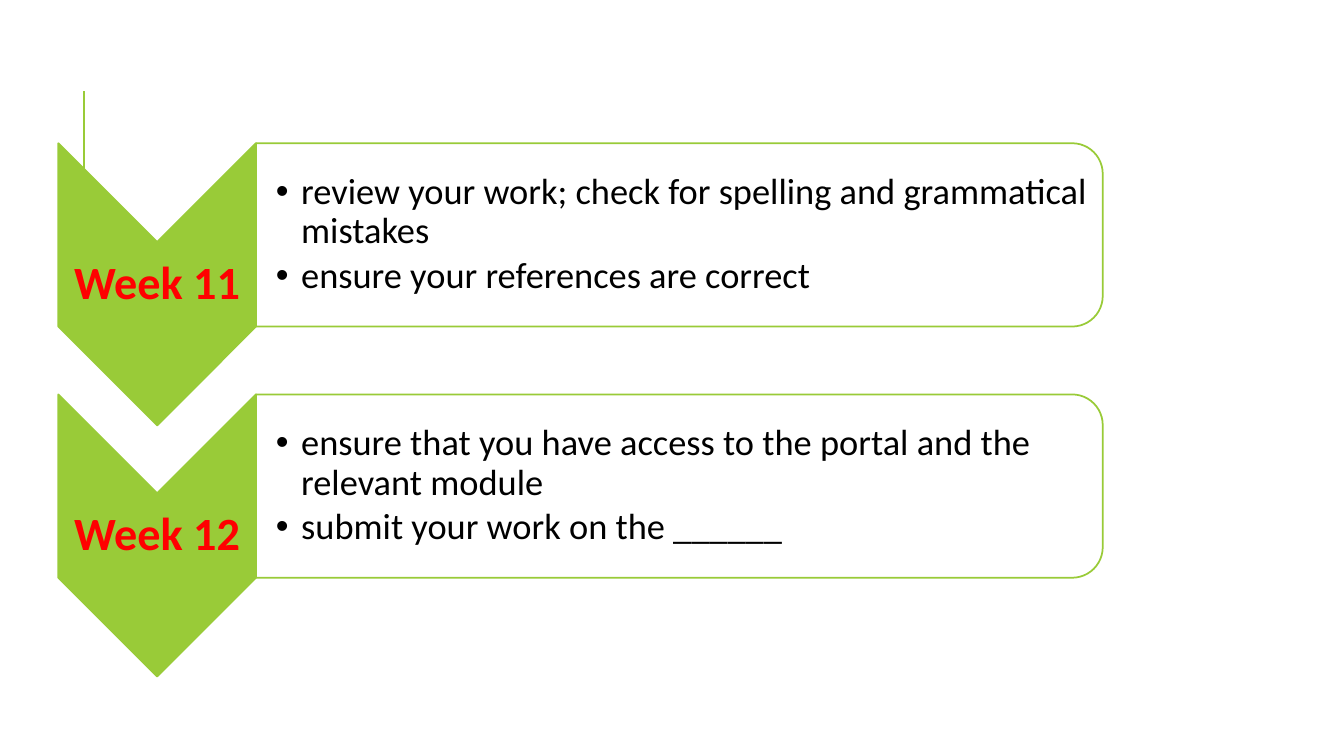
"""Build the slide with the tasks for weeks 11 and 12."""
from lxml import etree
from pptx import Presentation
from pptx.dml.color import RGBColor
from pptx.enum.shapes import MSO_CONNECTOR, MSO_SHAPE
from pptx.enum.text import MSO_ANCHOR, MSO_AUTO_SIZE, PP_ALIGN
from pptx.oxml.ns import qn
from pptx.util import Cm, Pt

STRAIGHT = MSO_CONNECTOR.STRAIGHT
CHEVRON = MSO_SHAPE.CHEVRON
PANEL = MSO_SHAPE.ROUND_2_SAME_RECTANGLE
MIDDLE = MSO_ANCHOR.MIDDLE
NO_FIT = MSO_AUTO_SIZE.NONE
CENTER, LEFT = PP_ALIGN.CENTER, PP_ALIGN.LEFT

WEEKS = [
    ("Week 11", ["review your work; check for spelling and grammatical mistakes",
                 "ensure your references are correct"]),
    ("Week 12", ["ensure that you have access to the portal and the relevant module",
                 "submit your work on the ______"]),
]

GREEN, WHITE, RED, BLACK = "99CB38", "FFFFFF", "FF0000", "000000"
LABEL_FONT = {"name": "Calibri", "size": Pt(33), "bold": True}
LIST_FONT = {"name": "Calibri", "size": Pt(26), "bold": False}
LABEL_PARA = {"alignment": CENTER, "line_spacing": 0.9}
LIST_PARA = {"alignment": LEFT, "line_spacing": 0.9,
             "space_before": Pt(0), "space_after": Pt(4)}

X, TOP, PITCH = 1.47, 3.61, 6.33
ARROW_W, ARROW_H = 4.98, 7.11
PANEL_W, PANEL_H = 21.34, 4.62
LABEL_H = 2.13
LIST_W, LIST_H = 21.11, 4.17
INSET, LIST_INSET, INDENT = 0.05, 0.5, 0.64


def rgb(value):
    return RGBColor.from_string(value)


def set_attrs(obj, values):
    for name, value in values.items():
        setattr(obj, name, value)


def add_turned(slide, kind, x, y, w, h, fill):
    """Add a shape turned by 90 degrees that shows in the box x, y, w, h."""
    sp = slide.shapes.add_shape(kind, Cm(x + (w - h) / 2), Cm(y + (h - w) / 2),
                                Cm(h), Cm(w))
    sp.rotation = 90
    sp.shadow.inherit = False
    sp.fill.solid()
    sp.fill.fore_color.rgb = rgb(fill)
    sp.line.color.rgb = rgb(GREEN)
    sp.line.width = Pt(1.25)


def write(sp, box, lines, para, font, color, inset):
    set_attrs(sp, dict(zip(("left", "top", "width", "height"), map(Cm, box))))
    tf = sp.text_frame
    set_attrs(tf, {"word_wrap": True, "auto_size": NO_FIT,
                   "vertical_anchor": MIDDLE, "margin_left": Cm(inset),
                   "margin_right": Cm(INSET), "margin_top": Cm(INSET),
                   "margin_bottom": Cm(INSET)})
    for i, line in enumerate(lines):
        p = tf.add_paragraph() if i else tf.paragraphs[0]
        set_attrs(p, para)
        r = p.add_run()
        r.text = line
        set_attrs(r.font, font)
        r.font.color.rgb = rgb(color)


def add_week(slide, body, y, label, tasks):
    add_turned(slide, CHEVRON, X, y, ARROW_W, ARROW_H, GREEN)
    sp = slide.shapes.add_textbox(0, 0, 0, 0)
    label_y = y + (ARROW_H - LABEL_H) / 2
    write(sp, (X, label_y, ARROW_W, LABEL_H), [label],
          LABEL_PARA, LABEL_FONT, RED, INSET)

    x = X + ARROW_W
    add_turned(slide, PANEL, x, y, PANEL_W, PANEL_H, WHITE)
    list_y = y + (PANEL_H - LIST_H) / 2
    write(body, (x, list_y, LIST_W, LIST_H), tasks,
          LIST_PARA, LIST_FONT, BLACK, LIST_INSET)
    for p in body.text_frame.paragraphs:
        pPr = p._p.get_or_add_pPr()
        pPr.set("marL", str(Cm(INDENT)))
        pPr.set("indent", str(-Cm(INDENT)))
    slide.shapes._spTree.append(body._element)


def main():
    prs = Presentation()
    prs.slide_width, prs.slide_height = Cm(33.87), Cm(19.05)
    slide = prs.slides.add_slide(prs.slide_layouts[3])
    title, *bodies = slide.placeholders
    slide.shapes._spTree.remove(title._element)

    rule = slide.shapes.add_connector(STRAIGHT, Cm(2.12), Cm(4.83), Cm(2.12), Cm(2.29))
    rule.line.color.rgb = rgb(GREEN)
    rule.line.width = Pt(1.5)
    etree.SubElement(rule._element.spPr, qn("a:effectLst"))

    for i, (body, (label, tasks)) in enumerate(zip(bodies, WEEKS)):
        add_week(slide, body, TOP + i * PITCH, label, tasks)
    prs.save("out.pptx")


if __name__ == "__main__":
    main()
